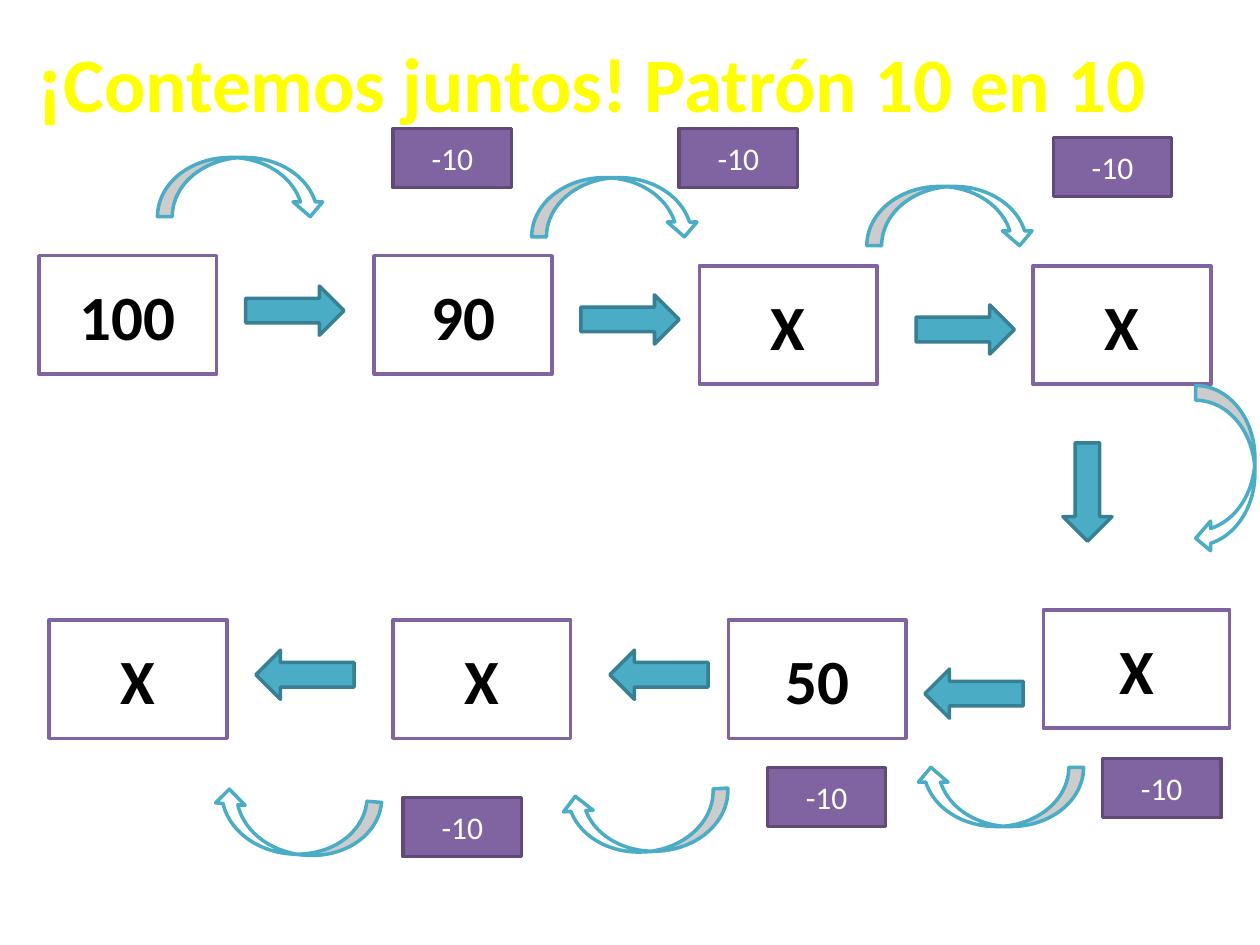
"""Build a slide that counts down from 100 in steps of ten."""
from pptx import Presentation
from pptx import util as u
from pptx.dml.color import RGBColor
from pptx.enum import shapes, text

KIND = shapes.MSO_SHAPE
HUES = {
    "title": "FFFF00", "white": "FFFFFF", "ink": "000000",
    "plum": "8064A2", "grape": "5F4A78", "teal": "4BACC6", "deep": "377F92",
}
CARDS = [
    ("100", 0.31, 2.03, 1.41), ("90", 2.97, 2.03, 1.41),
    ("X", 5.55, 2.11, 1.41), ("X", 8.2, 2.11, 1.41),
    ("X", 8.28, 4.84, 1.48), ("50", 5.78, 4.92, 1.41),
    ("X", 3.12, 4.92, 1.41), ("X", 0.39, 4.92, 1.41),
]
ARROWS = [
    (1.95, 2.27, 0), (4.61, 2.34, 0), (7.27, 2.42, 0), (8.24, 3.71, 90),
    (7.34, 5.31, 180), (4.84, 5.16, 180), (2.03, 5.16, 180),
]
CURVES = [
    (1.25, 1.25, 0), (4.22, 1.41, 0), (6.88, 1.48, 0), (9.06, 3.49, 90),
    (7.27, 6.09, 180), (4.46, 6.29, 176.9), (1.68, 6.31, 185),
]
STEPS = [
    (3.12, 1.02), (5.39, 1.02), (8.36, 1.09),
    (8.75, 6.02), (6.09, 6.09), (3.2, 6.33),
]


def tint(name):
    """Return the named colour."""
    return RGBColor.from_string(HUES[name])


def write(shape, runs, hue, bold):
    """Write centred runs, given as text and size, into a shape."""
    frame = shape.text_frame
    frame.word_wrap = True
    frame.vertical_anchor = text.MSO_ANCHOR.MIDDLE
    line = frame.paragraphs[0]
    line.alignment = text.PP_ALIGN.CENTER
    for words, size in runs:
        run = line.add_run()
        run.text = words
        font = run.font
        font.name, font.size, font.bold = "Calibri", u.Pt(size), bold
        font.color.rgb = tint(hue)


def draw(slide, kind, place, fill, edge, turn=0):
    """Add a flat preset shape with a fill, an outline and a rotation."""
    shape = slide.shapes.add_shape(kind, *map(u.Inches, place))
    shape.shadow.inherit = False
    shape.fill.solid()
    shape.fill.fore_color.rgb = tint(fill)
    shape.line.color.rgb = tint(edge)
    shape.line.width = u.Pt(2)
    shape.rotation = turn
    return shape


def head(slide):
    """Add the slide title."""
    box = slide.shapes.add_textbox(0, 0, u.Inches(9.39), u.Inches(1.25))
    runs = [("¡", 48), ("Contemos juntos! Patrón 10 en 10", 44)]
    write(box, runs, "title", True)


def card(slide, label, left, top, width):
    """Add a number card."""
    place = (left, top, width, 0.94)
    box = draw(slide, KIND.RECTANGLE, place, "white", "plum")
    write(box, [(label, 36)], "ink", True)


def step(slide, left, top):
    """Add a label that names the step."""
    place = (left, top, 0.94, 0.47)
    box = draw(slide, KIND.RECTANGLE, place, "plum", "grape")
    write(box, [("-10", 18)], "white", False)


def arrow(slide, left, top, turn):
    """Add a block arrow between two cards."""
    place = (left, top, 0.78, 0.39)
    draw(slide, KIND.RIGHT_ARROW, place, "teal", "deep", turn)


def curve(slide, left, top, turn):
    """Add a curved arrow that jumps between two cards."""
    place = (left, top, 1.33, 0.47)
    draw(slide, KIND.CURVED_DOWN_ARROW, place, "white", "teal", turn)


def main():
    """Build and save the slide."""
    deck = Presentation()
    deck.slide_width, deck.slide_height = u.Inches(10), u.Inches(7.5)
    slide = deck.slides.add_slide(deck.slide_layouts[6])
    head(slide)
    groups = [(card, CARDS), (arrow, ARROWS), (curve, CURVES), (step, STEPS)]
    for make, items in groups:
        for item in items:
            make(slide, *item)
    deck.save("out.pptx")


if __name__ == "__main__":
    main()
